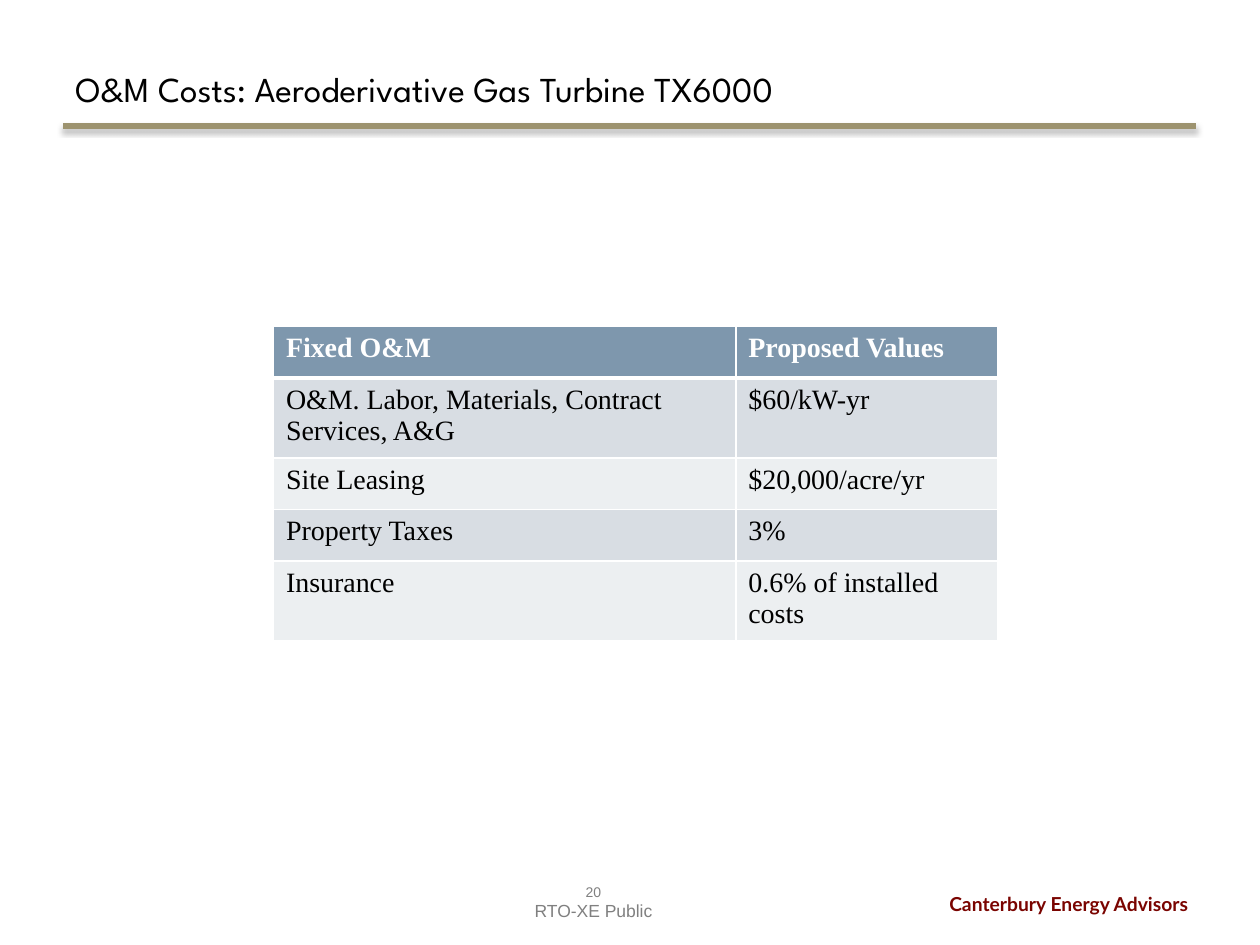
from lxml.etree import SubElement
from pptx import Presentation
from pptx.dml.color import RGBColor
from pptx.enum.shapes import MSO_CONNECTOR
from pptx.enum.text import MSO_ANCHOR, PP_ALIGN
from pptx.oxml import parse_xml
from pptx.oxml.ns import nsdecls, qn
from pptx.util import Inches, Pt

BLANK_LAYOUT = 6
BLACK, WHITE, GREY = "000000", "FFFFFF", "808080"
GOLD, MAROON = "9D936F", "7A0400"
HEADER_FILL, BAND_FILLS = "7E97AD", ("D8DDE3", "ECEFF1")

COSTS = [
    ("Fixed O&M", "Proposed Values"),
    ("O&M. Labor, Materials, Contract Services, A&G", "$60/kW-yr"),
    ("Site Leasing", "$20,000/acre/yr"),
    ("Property Taxes", "3%"),
    ("Insurance", "0.6% of installed costs"),
]


def color(hex_value):
    return RGBColor.from_string(hex_value)


def unit(count):
    """Length of grid columns or rows; the page is 100 columns by 75 rows."""
    return Inches(count / 10)


class SlideBuilder:
    table_font = "Times New Roman"
    table_size = 16

    def __init__(self, page):
        self.page = page

    def style(self, paragraph, font, size, hex_value, bold=False):
        for span in paragraph.runs:
            span.font.name = font
            span.font.size = Pt(size)
            span.font.bold = bold
            span.font.color.rgb = color(hex_value)

    def text(self, area, lines, font, sizes, hex_value, bold=False,
             align=PP_ALIGN.LEFT, anchor=MSO_ANCHOR.TOP):
        box = self.page.shapes.add_textbox(*map(unit, area))
        frame = box.text_frame
        frame.word_wrap = True
        frame.vertical_anchor = anchor
        frame.text = "\n".join(lines)
        for paragraph, size in zip(frame.paragraphs, sizes):
            paragraph.alignment = align
            self.style(paragraph, font, size, hex_value, bold)

    def rule(self, left, right, row, hex_value, width):
        line = self.page.shapes.add_connector(
            MSO_CONNECTOR.STRAIGHT, unit(left), unit(row), unit(right), unit(row))
        line.line.color.rgb = color(hex_value)
        line.line.width = Pt(width)
        # Soft shadow straight below the line
        line._element.spPr.append(parse_xml(
            f'<a:effectLst {nsdecls("a")}>'
            f'<a:outerShdw blurRad="{Pt(3.1)}" dist="{Pt(1.8)}" dir="5400000" rotWithShape="0">'
            f'<a:srgbClr val="{BLACK}"><a:alpha val="35000"/></a:srgbClr>'
            '</a:outerShdw></a:effectLst>'))

    def borders(self, cell, widths):
        properties = cell._tc.get_or_add_tcPr()
        for side, width in zip("LRTB", widths):
            edge = SubElement(properties, qn(f"a:ln{side}"), w=str(Pt(width)))
            fill = SubElement(edge, qn("a:solidFill"))
            SubElement(fill, qn("a:srgbClr"), val=WHITE)

    def table(self, left, top, columns, row_height, rows):
        table = self.page.shapes.add_table(
            len(rows), len(columns), unit(left), unit(top),
            unit(sum(columns)), unit(row_height * len(rows))).table
        for column, width in zip(table.columns, columns):
            column.width = unit(width)
        for r, values in enumerate(rows):
            header = r == 0
            fill = HEADER_FILL if header else BAND_FILLS[(r - 1) % 2]
            for c, value in enumerate(values):
                cell = table.cell(r, c)
                cell.text = value
                self.style(cell.text_frame.paragraphs[0], self.table_font,
                           self.table_size, WHITE if header else BLACK, header)
                # Borders come before the fill in the cell properties
                self.borders(cell, (1, 1, 3 if r == 1 else 1, 3 if header else 1))
                cell.fill.solid()
                cell.fill.fore_color.rgb = color(fill)


def main():
    deck = Presentation()
    deck.slide_width, deck.slide_height = unit(100), unit(75)
    slide = SlideBuilder(deck.slides.add_slide(deck.slide_layouts[BLANK_LAYOUT]))

    # Heading
    slide.rule(5, 94.9, 10, GOLD, 3)
    slide.text((5, 3, 90, 6.2), ["O&M Costs: Aeroderivative Gas Turbine TX6000"],
               "League Spartan", [20], BLACK, anchor=MSO_ANCHOR.BOTTOM)

    # Cost table
    slide.table(21.7, 25.9, (36.7, 20.8), 4.1, COSTS)

    # Footer
    slide.text((34.2, 69.6, 25.8, 3), ["20", "RTO-XE Public"], "Arial", [8, 10],
               GREY, align=PP_ALIGN.CENTER)
    slide.text((57.9, 70.3, 37.4, 2.9), ["Canterbury Energy Advisors"], "Lato", [11],
               MAROON, bold=True, align=PP_ALIGN.RIGHT)

    deck.save("out.pptx")


if __name__ == "__main__":
    main()
